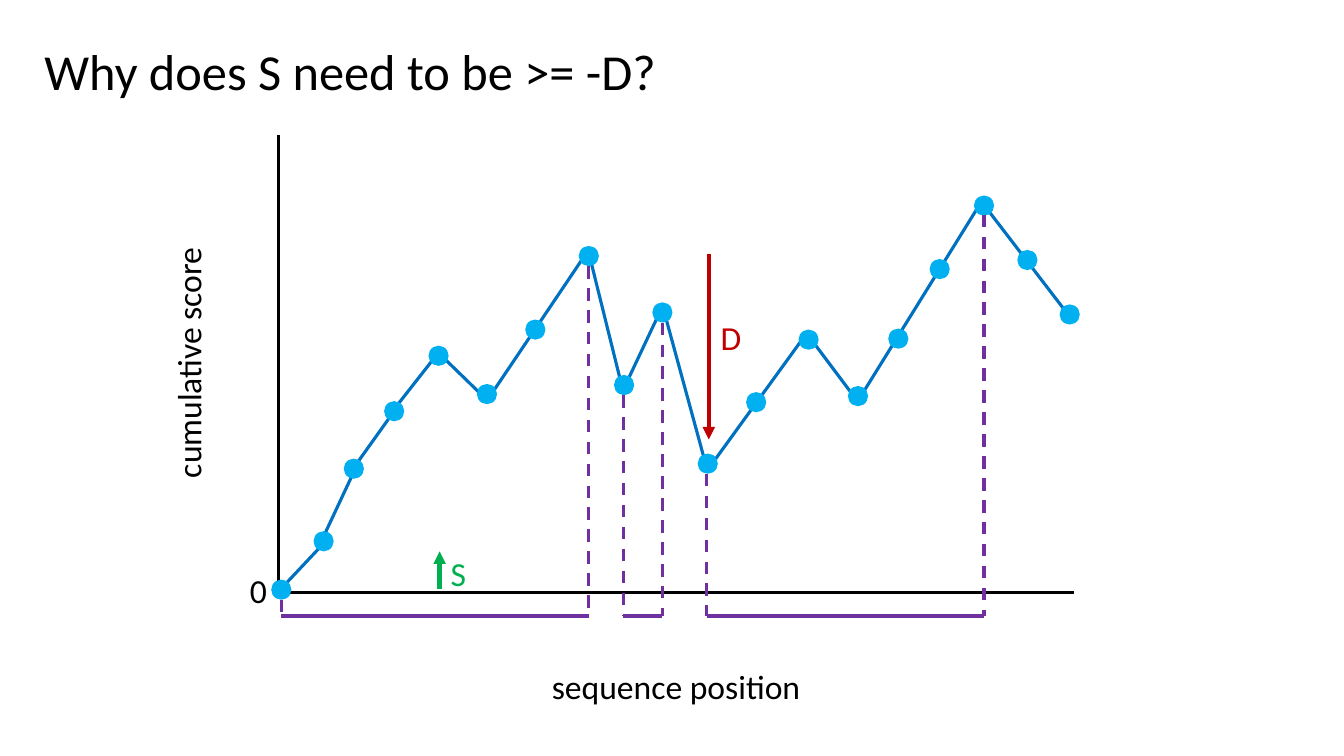
from lxml import etree
from pptx import Presentation
from pptx.dml.color import RGBColor
from pptx.enum.dml import MSO_LINE
from pptx.enum.shapes import MSO_CONNECTOR, MSO_SHAPE
from pptx.enum.text import MSO_ANCHOR, MSO_AUTO_SIZE, PP_ALIGN
from pptx.oxml.ns import qn
from pptx.util import Inches, Pt

STRAIGHT = MSO_CONNECTOR.STRAIGHT
OVAL = MSO_SHAPE.OVAL
DASH = MSO_LINE.DASH
LEFT, CENTER = PP_ALIGN.LEFT, PP_ALIGN.CENTER
MIDDLE = MSO_ANCHOR.MIDDLE
FIT_SHAPE, NO_FIT = MSO_AUTO_SIZE.SHAPE_TO_FIT_TEXT, MSO_AUTO_SIZE.NONE

# Content: all positions in inches
FONT = "Calibri"
COLORS = {"axis": "000000", "score": "0070C0", "dot": "00B0F0",
          "segment": "7030A0", "drop": "C00000", "minimum": "00B050"}
TITLE = "Why does S need to be >= -D?"

AXES = [(2.76, 5.88, 10.65, 5.88), (2.76, 1.34, 2.76, 5.9)]

# Cumulative score at each sequence position (dot centres)
SCORES = [(2.79, 5.85), (3.21, 5.37), (3.51, 4.65), (3.91, 4.08),
          (4.35, 3.53), (4.83, 3.91), (5.31, 3.27), (5.84, 2.54),
          (6.19, 3.82), (6.57, 3.1), (7.02, 4.6), (7.5, 3.99),
          (8.02, 3.37), (8.51, 3.93), (8.91, 3.36), (9.32, 2.67),
          (9.76, 2.04), (10.19, 2.58), (10.61, 3.12)]
DOT_SIZE = 0.2

# Straight runs of the score curve, some spanning several dots
SCORE_RUNS = [(3.23, 5.37, 2.76, 5.87), (3.51, 4.68, 3.22, 5.3),
              (3.88, 4.12, 3.53, 4.61), (4.3, 3.56, 3.94, 4.02),
              (4.41, 3.56, 4.77, 3.91), (5.81, 2.52, 4.84, 3.96),
              (5.84, 2.51, 6.19, 3.92), (6.58, 3.02, 6.18, 3.87),
              (6.6, 3.14, 6.99, 4.57), (8.02, 3.28, 7.02, 4.66),
              (8.01, 3.32, 8.49, 3.96), (9.71, 2.04, 8.52, 3.96),
              (9.78, 2.06, 10.57, 3.09)]

# Scoring segments: start x, start y, end x, end y of the dashed drop lines
SEGMENTS = [(2.79, 5.95, 5.84, 2.64), (6.18, 3.92, 6.57, 3.2),
            (7.01, 4.7, 9.76, 2.13)]
SEGMENT_Y = 6.11

ARROWS = [("drop", 7.03, 2.52, 4.36), ("minimum", 4.36, 5.84, 5.47)]

# text, colour, left, top, width, alignment, rotation
LABELS = [("S", "minimum", 4.37, 5.44, 0.44, LEFT, 0),
          ("D", "drop", 7.05, 3.09, 0.44, LEFT, 0),
          ("0", "axis", 2.38, 5.6, 0.44, LEFT, 0),
          ("sequence position", "axis", 2.76, 6.56, 7.89, CENTER, 0),
          ("cumulative score", "axis", -0.4, 3.35, 4.53, CENTER, 270)]
LABEL_HEIGHT = 0.5

prs = Presentation()
prs.slide_width, prs.slide_height = Inches(13.33), Inches(7.5)
slide = prs.slides.add_slide(prs.slide_layouts[5])


def rgb(name):
    return RGBColor.from_string(COLORS[name])


def add_line(ends, color, width=2.25, dash=None, arrow=False):
    line = slide.shapes.add_connector(STRAIGHT, *map(Inches, ends))
    line.line.color.rgb = rgb(color)
    line.line.width = Pt(width)
    if dash is not None:
        line.line.dash_style = dash
    if arrow:
        etree.SubElement(line.line._get_or_add_ln(), qn("a:tailEnd"), type="triangle")
    etree.SubElement(line._element.spPr, qn("a:effectLst"))


def set_text(frame, text, size, color, align):
    frame.text = text
    frame.word_wrap = True
    paragraph = frame.paragraphs[0]
    paragraph.alignment = align
    paragraph.font.name = FONT
    paragraph.font.size = Pt(size)
    paragraph.font.color.rgb = rgb(color)


# Title
title = slide.shapes.title
title.left, title.top = Inches(0.34), Inches(0.01)
title.width, title.height = Inches(11.5), Inches(1.45)
set_text(title.text_frame, TITLE, 36, "axis", LEFT)
title.text_frame.auto_size = NO_FIT
title.text_frame.vertical_anchor = MIDDLE
title.text_frame.paragraphs[0].line_spacing = 0.9

# Score curve and axes
for run in SCORE_RUNS:
    add_line(run, "score")
for axis in AXES:
    add_line(axis, "axis")

# Dots
for x, y in SCORES:
    dot = slide.shapes.add_shape(OVAL, Inches(x - DOT_SIZE / 2), Inches(y - DOT_SIZE / 2),
                                 Inches(DOT_SIZE), Inches(DOT_SIZE))
    dot.shadow.inherit = False
    dot.fill.solid()
    dot.fill.fore_color.rgb = rgb("dot")
    dot.line.fill.background()

# Scoring segments below the axis
for start_x, start_y, end_x, end_y in SEGMENTS:
    add_line((start_x, SEGMENT_Y, end_x, SEGMENT_Y), "segment", 3)
    for x, y in ((start_x, start_y), (end_x, end_y)):
        add_line((x, y, x, SEGMENT_Y), "segment", dash=DASH)

# Arrows for D and S
for color, x, tail_y, head_y in ARROWS:
    add_line((x, tail_y, x, head_y), color, 3, arrow=True)

# Labels
for text, color, left, top, width, align, rotation in LABELS:
    label = slide.shapes.add_textbox(Inches(left), Inches(top), Inches(width),
                                     Inches(LABEL_HEIGHT))
    label.rotation = rotation
    set_text(label.text_frame, text, 24, color, align)
    label.text_frame.auto_size = FIT_SHAPE

prs.save("out.pptx")
